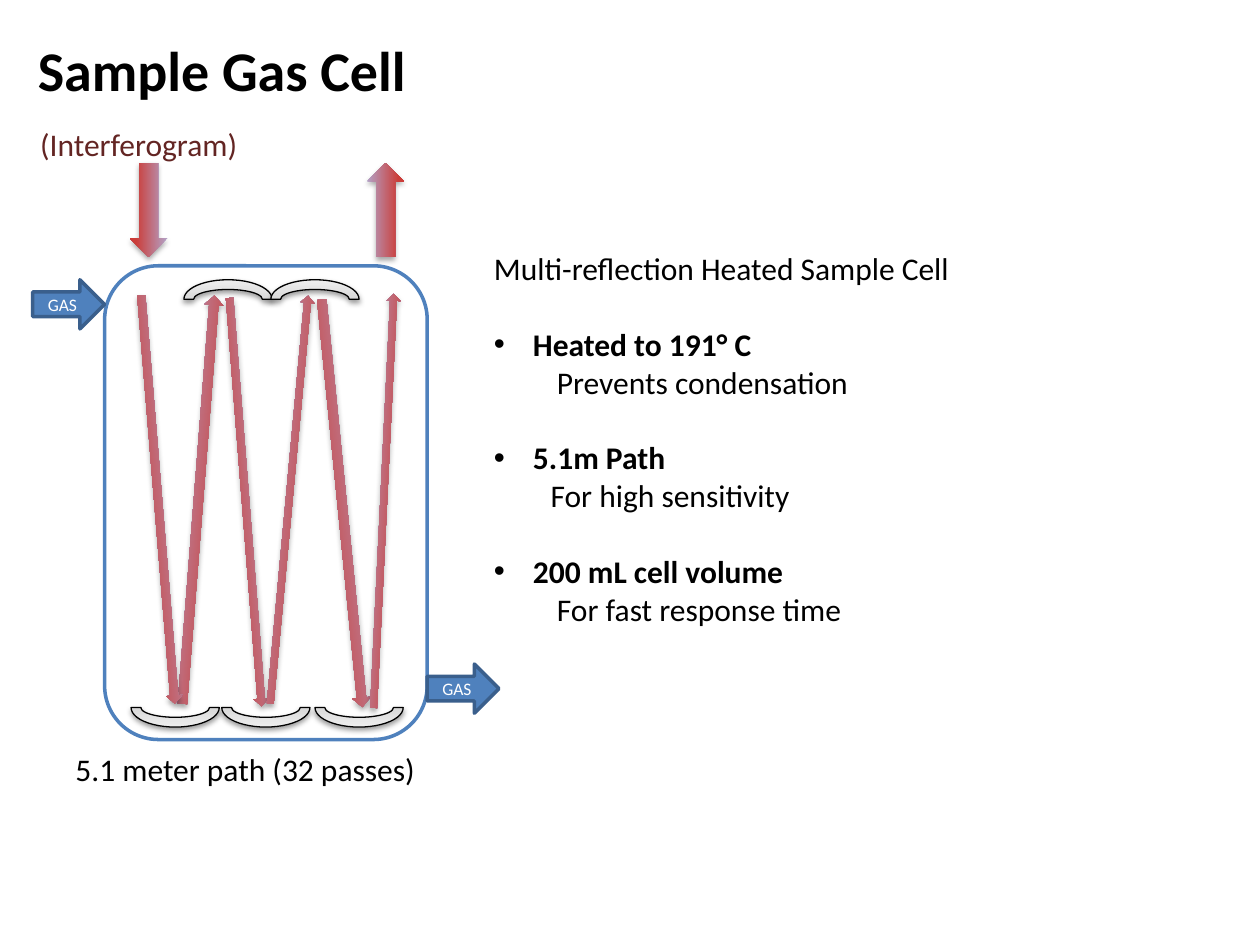
from dataclasses import dataclass

from lxml.etree import SubElement
from pptx import Presentation
from pptx.dml.color import RGBColor
from pptx.enum.shapes import MSO_SHAPE as Preset
from pptx.enum.text import MSO_ANCHOR as Anchor, MSO_AUTO_SIZE as AutoSize, PP_ALIGN as Align
from pptx.oxml.ns import qn
from pptx.util import Inches, Pt


@dataclass(frozen=True)
class Theme:
    font: str = "Calibri"
    title_size: int = 32
    text_size: int = 18
    gas_size: int = 10
    black: str = "000000"
    white: str = "FFFFFF"
    blue: str = "4F81BD"
    dark_blue: str = "3A5F8C"
    maroon: str = "632523"
    beam: tuple = ((0, "B3A2C7"), (84, "CB3E3A"), (100, "CE3B37"))
    mirror: tuple = ((0, "BDBDBD"), (35, "D1D1D1"), (100, "EEEEEE"))


def rgb(value):
    return RGBColor.from_string(value)


def indent(para, left, bullet=None, hanging=0):
    props = para._p.get_or_add_pPr()
    props.set("marL", str(Inches(left)))
    props.set("indent", str(-Inches(hanging)))
    if bullet:
        SubElement(props, qn("a:buFont")).set("typeface", "Arial")
        SubElement(props, qn("a:buChar")).set("char", bullet)
    else:
        SubElement(props, qn("a:buNone"))


def fill_gradient(shape, stops, angle):
    """Fill with (percent, colour) stops; the angle runs counter-clockwise."""
    shape.fill.gradient()
    shape.fill.gradient_angle = angle
    stop_list = shape._element.spPr.find(qn("a:gradFill")).find(qn("a:gsLst"))
    stop_list.clear()
    for percent, color in stops:
        stop = SubElement(stop_list, qn("a:gs"), pos=str(percent * 1000))
        SubElement(stop, qn("a:srgbClr"), val=color)


def drop_shadow(shape, color, opacity, blur, distance):
    effects = shape._element.spPr.find(qn("a:effectLst"))
    shadow = SubElement(effects, qn("a:outerShdw"), blurRad=str(Pt(blur)),
                        dist=str(Pt(distance)), dir="5400000", rotWithShape="0")
    tint = SubElement(shadow, qn("a:srgbClr"), val=color)
    SubElement(tint, qn("a:alpha"), val=str(opacity * 1000))


class SlideBuilder:
    def __init__(self, deck, theme):
        self.theme = theme
        self.slide = deck.slides.add_slide(deck.slide_layouts[1])

    def add_text(self, para, text, *, size=None, color=None, bold=False, align=Align.LEFT):
        span = para.add_run()
        span.text = text
        span.font.name = self.theme.font
        span.font.size = Pt(size or self.theme.text_size)
        span.font.bold = bold
        span.font.color.rgb = rgb(color or self.theme.black)
        para.alignment = align

    def place(self, box, left, top, width, height):
        box.left, box.top = Inches(left), Inches(top)
        box.width, box.height = Inches(width), Inches(height)

    def title(self, text, *bounds):
        box = self.slide.shapes.title
        self.place(box, *bounds)
        box.text_frame.vertical_anchor = Anchor.MIDDLE
        self.add_text(box.text_frame.paragraphs[0], text, size=self.theme.title_size, bold=True)

    def feature_list(self, heading, features, *bounds):
        """Heading, then (name, benefit, benefit indent) groups a line apart."""
        box = self.slide.placeholders[1]
        self.place(box, *bounds)
        frame = box.text_frame
        frame.auto_size = AutoSize.NONE
        frame.vertical_anchor = Anchor.TOP
        para = frame.paragraphs[0]
        indent(para, 0)
        para.space_before = Pt(0)
        self.add_text(para, heading)
        for name, benefit, left in features:
            para = frame.add_paragraph()
            indent(para, 0.31, "•", 0.31)
            para.space_before = Pt(21.6)
            self.add_text(para, name, bold=True)
            para = frame.add_paragraph()
            indent(para, left)
            para.space_before = Pt(0)
            self.add_text(para, benefit)

    def label(self, text, *bounds, **text_format):
        box = self.slide.shapes.add_textbox(*map(Inches, bounds))
        box.text_frame.word_wrap = True
        box.text_frame.auto_size = AutoSize.SHAPE_TO_FIT_TEXT
        self.add_text(box.text_frame.paragraphs[0], text, **text_format)

    def shape(self, preset, *bounds, rotation=0, line=None, line_width=2):
        shape = self.slide.shapes.add_shape(preset, *map(Inches, bounds))
        shape.rotation = rotation
        shape.shadow.inherit = False
        if line:
            shape.line.color.rgb = rgb(line)
            shape.line.width = Pt(line_width)
        else:
            shape.line.fill.background()
        return shape

    def cell(self, *bounds):
        shape = self.shape(Preset.ROUNDED_RECTANGLE, *bounds, rotation=90, line=self.theme.blue)
        shape.fill.solid()
        shape.fill.fore_color.rgb = rgb(self.theme.white)

    def beam(self, *bounds, rotation=0):
        shape = self.shape(Preset.DOWN_ARROW, *bounds, rotation=rotation)
        fill_gradient(shape, self.theme.beam, 180)
        drop_shadow(shape, self.theme.black, 35, 3.1, 1.8)

    def mirror(self, left, top, rotation=0):
        shape = self.shape(Preset.BLOCK_ARC, left, top, 0.7, 0.31, rotation=rotation,
                           line=self.theme.black, line_width=0.75)
        fill_gradient(shape, self.theme.mirror, 90)
        drop_shadow(shape, self.theme.black, 38, 3.1, 1.6)

    def gas_arrow(self, left, top):
        shape = self.shape(Preset.RIGHT_ARROW, left, top, 0.57, 0.39, line=self.theme.dark_blue)
        shape.fill.solid()
        shape.fill.fore_color.rgb = rgb(self.theme.blue)
        shape.text_frame.vertical_anchor = Anchor.MIDDLE
        self.add_text(shape.text_frame.paragraphs[0], "GAS", size=self.theme.gas_size,
                      color=self.theme.white, align=Align.CENTER)


def main():
    deck = Presentation()
    deck.slide_width, deck.slide_height = Inches(10), Inches(7.5)
    theme = Theme()
    page = SlideBuilder(deck, theme)

    page.title("Sample Gas Cell", 0.2, 0.2, 9, 0.7)
    features = [
        ("Heated to 191° C", "Prevents condensation", 0.5),
        ("5.1m Path", "For high sensitivity", 0.45),
        ("200 mL cell volume", "For fast response time", 0.5),
    ]
    page.feature_list("Multi-reflection Heated Sample Cell", features, 3.82, 1.93, 5.68, 3.13)

    page.cell(0.23, 2.71, 3.76, 2.56)
    for left in (1.46, 2.15):
        page.mirror(left, 2.22)
    for left in (1.04, 1.76, 2.5):
        page.mirror(left, 5.46, rotation=180)

    reflections = [
        (1.5, 2.34, 0.15, 3.25, 184.5),
        (1.19, 2.34, 0.13, 3.25, 355.3),
        (1.89, 2.36, 0.12, 3.25, 355.5),
        (2.24, 2.34, 0.11, 3.25, 185.3),
        (2.64, 2.37, 0.15, 3.25, 354.3),
        (2.99, 2.33, 0.11, 3.29, 182.8),
    ]
    for *bounds, rotation in reflections:
        page.beam(*bounds, rotation=rotation)
    for left, rotation in ((1.03, 0), (2.91, 180)):
        page.beam(left, 1.29, 0.3, 0.75, rotation=rotation)

    page.label("5.1 meter path (32 passes)", 0.5, 5.9, 3.22, 0.4)
    for left, top in ((0.26, 2.22), (3.39, 5.27)):
        page.gas_arrow(left, top)
    page.label("(Interferogram)", 0.22, 0.94, 2.08, 0.4, color=theme.maroon)

    deck.save("out.pptx")


if __name__ == "__main__":
    main()
